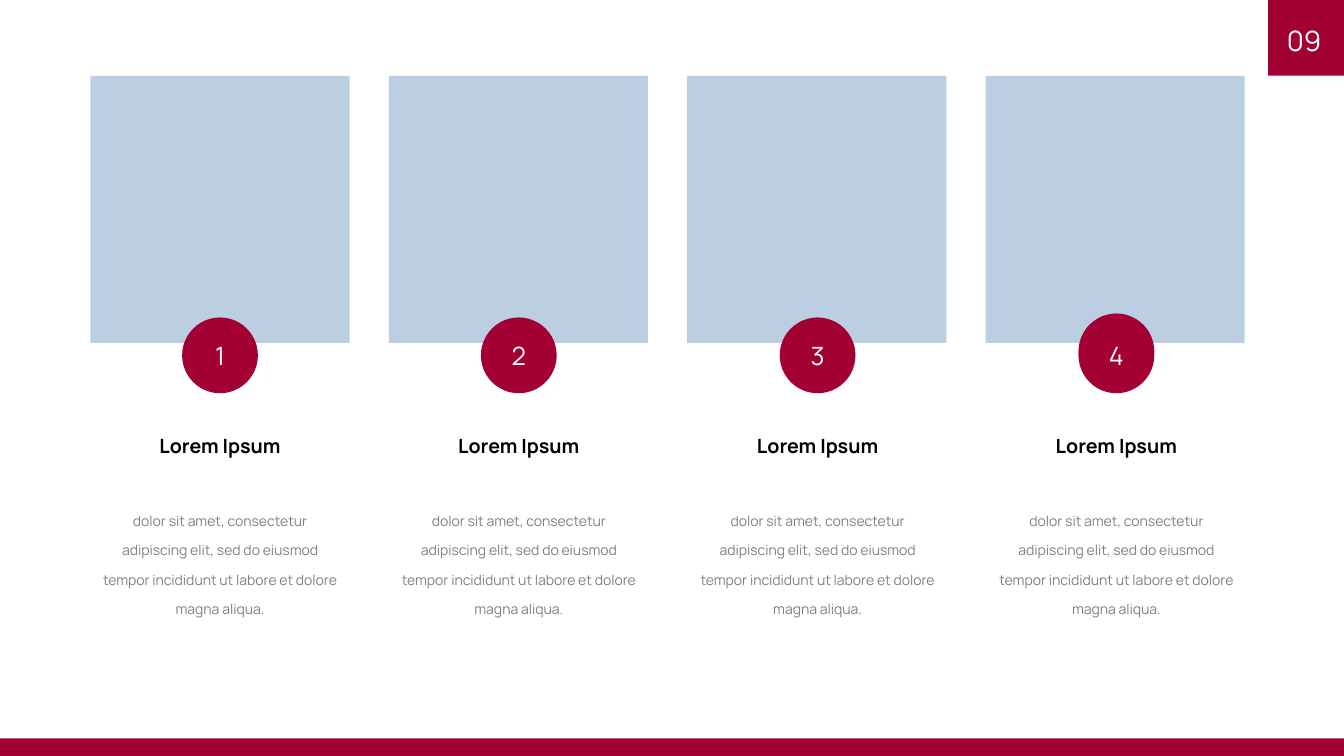
from dataclasses import dataclass

import pptx
import pptx.dml.color
import pptx.enum.shapes
import pptx.enum.text
import pptx.util
from pptx.util import Cm

COLORS = {
    "crimson": "A30134",
    "tile": "BBCEE2",
    "heading": "000000",
    "body": "808080",
    "white": "FFFFFF",
}
FONT = "Manrope"
RECT = pptx.enum.shapes.MSO_SHAPE.RECTANGLE
OVAL = pptx.enum.shapes.MSO_SHAPE.OVAL
ALIGN = pptx.enum.text.PP_ALIGN
ANCHOR = pptx.enum.text.MSO_ANCHOR

SLIDE_WIDTH, SLIDE_HEIGHT = 33.87, 19.05
TILE_LEFT, TILE_PITCH, TILE_WIDTH = 2.28, 7.52, 6.53
TEXT_PITCH = 7.53
BADGE_LEFT, BADGE_TOP = 4.59, 8.0
SQUARE = 1.91
BAR_HEIGHT = 0.44


@dataclass
class Box:
    """Position and size in centimetres."""
    left: float
    top: float
    width: float
    height: float

    def lengths(self) -> tuple:
        return Cm(self.left), Cm(self.top), Cm(self.width), Cm(self.height)


@dataclass
class Card:
    number: str
    heading: str
    body: str


BODY = ("dolor sit amet, consectetur adipiscing elit, sed do eiusmod "
        "tempor incididunt ut labore et dolore magna aliqua.")
CARDS = [Card(str(number), "Lorem Ipsum", BODY) for number in range(1, 5)]


def rgb(color: str) -> pptx.dml.color.RGBColor:
    return pptx.dml.color.RGBColor.from_string(COLORS[color])


def add_filled(slide, preset, box: Box, color: str):
    shape = slide.shapes.add_shape(preset, *box.lengths())
    shape.shadow.inherit = False
    shape.fill.solid()
    shape.fill.fore_color.rgb = rgb(color)
    shape.line.fill.background()
    return shape


def write(frame, text: str, *, size: float, color: str, bold: bool = False,
          align=ALIGN.CENTER, anchor=ANCHOR.TOP, spacing: float = 1.0) -> None:
    frame.word_wrap = True
    frame.vertical_anchor = anchor
    paragraph = frame.paragraphs[0]
    paragraph.alignment = align
    paragraph.line_spacing = spacing
    run = paragraph.add_run()
    run.text = text
    run.font.name = FONT
    run.font.size = pptx.util.Pt(size)
    run.font.bold = bold
    run.font.color.rgb = rgb(color)


def add_text(slide, box: Box, text: str, **text_format):
    frame = slide.shapes.add_textbox(*box.lengths()).text_frame
    write(frame, text, **text_format)
    return frame


def add_card(slide, card: Card, index: int) -> None:
    text_left = TILE_LEFT + index * TEXT_PITCH
    add_text(slide, Box(text_left, 12.47, TILE_WIDTH, 4.65), card.body,
             size=10, color="body", spacing=1.75)
    add_text(slide, Box(text_left, 10.82, TILE_WIDTH, 1.65), card.heading,
             size=14, color="heading", bold=True)
    badge = add_filled(
        slide, OVAL,
        Box(BADGE_LEFT + index * TEXT_PITCH, BADGE_TOP, SQUARE, SQUARE), "crimson")
    write(badge.text_frame, card.number, size=18, color="white", anchor=ANCHOR.MIDDLE)


def add_page_number(slide, number: str) -> None:
    frame = add_text(slide, Box(31.9, 0.15, 1.4, 1.75), number, size=20,
                     color="white", align=ALIGN.RIGHT, anchor=ANCHOR.MIDDLE)
    frame.margin_left = frame.margin_right = 0
    frame.margin_top = frame.margin_bottom = 0


def main() -> None:
    deck = pptx.Presentation()
    deck.slide_width, deck.slide_height = Cm(SLIDE_WIDTH), Cm(SLIDE_HEIGHT)
    slide = deck.slides.add_slide(deck.slide_layouts[6])

    add_filled(slide, RECT, Box(SLIDE_WIDTH - SQUARE, 0, SQUARE, SQUARE), "crimson")
    add_filled(slide, RECT,
               Box(0, SLIDE_HEIGHT - BAR_HEIGHT, SLIDE_WIDTH, BAR_HEIGHT), "crimson")
    for index in range(len(CARDS)):
        add_filled(slide, RECT,
                   Box(TILE_LEFT + index * TILE_PITCH, SQUARE, TILE_WIDTH, 6.73), "tile")
    # The last badge has a second disc that rises slightly above it.
    last_left = BADGE_LEFT + (len(CARDS) - 1) * TEXT_PITCH
    add_filled(slide, OVAL, Box(last_left, BADGE_TOP - 0.1, SQUARE, SQUARE), "crimson")
    for index, card in enumerate(CARDS):
        add_card(slide, card, index)
    add_page_number(slide, "09")

    deck.save("out.pptx")


if __name__ == "__main__":
    main()
